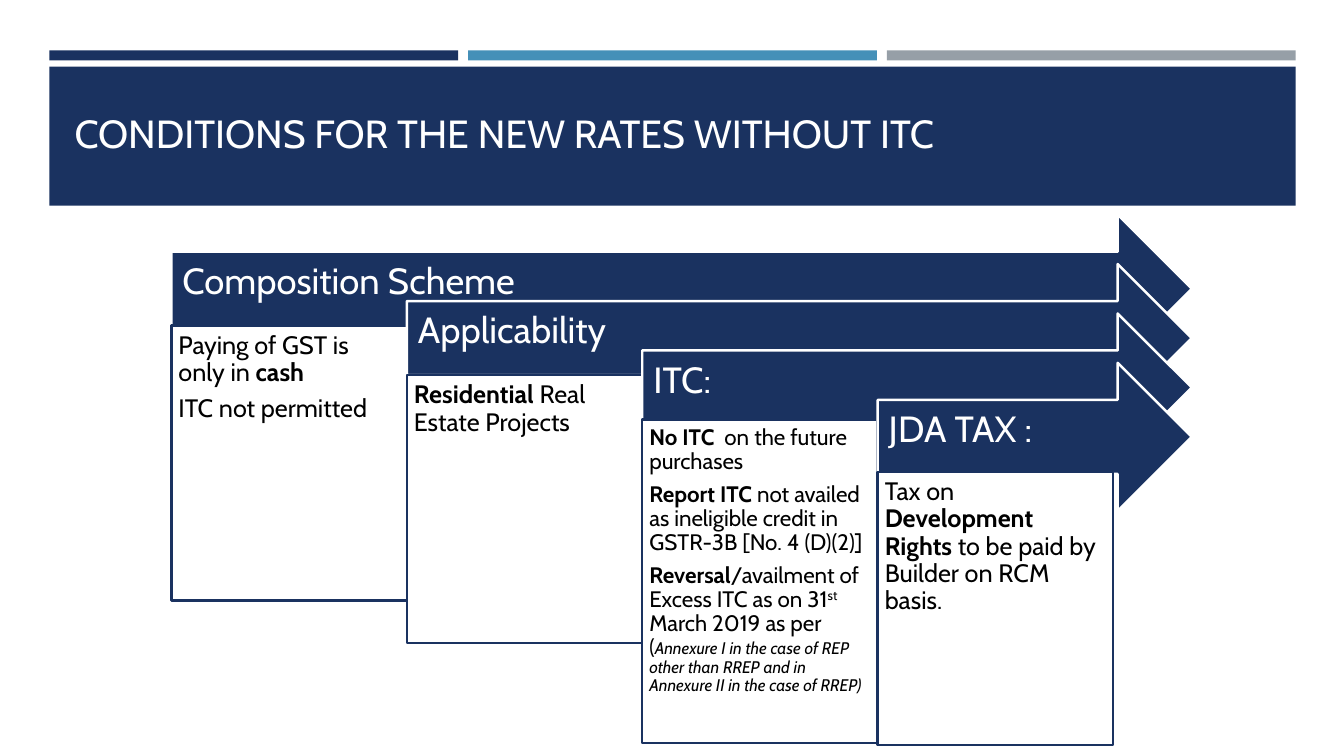
from dataclasses import dataclass

import pptx
import pptx.util
from pptx.dml.color import RGBColor
from pptx.enum.shapes import MSO_SHAPE
from pptx.enum.text import MSO_ANCHOR, PP_ALIGN
from pptx.util import Inches, Pt


@dataclass(frozen=True)
class Theme:
    font: str = "Cabin"
    navy: RGBColor = RGBColor(0x1A, 0x32, 0x60)
    blue: RGBColor = RGBColor(0x45, 0x90, 0xB8)
    gray: RGBColor = RGBColor(0x96, 0x9F, 0xA7)
    white: RGBColor = RGBColor(0xFF, 0xFF, 0xFF)
    black: RGBColor = RGBColor(0, 0, 0)
    title: int = 28
    head: int = 26
    body: int = 18
    small: int = 16
    paren: int = 15
    note: int = 12
    line: float = 1.75


THEME = Theme()

# Heading, panel top, panel height, text size, paragraphs of (text, style) runs
STEPS = [
    ("Composition Scheme", 3.23, 2.73, THEME.body, [
        [("Paying of GST is only in ", ""), ("cash", "bold")],
        [("ITC not permitted", "")],
    ]),
    ("Applicability", 3.72, 2.66, THEME.body, [
        [("Residential", "bold"), (" Real Estate Projects", "")],
    ]),
    ("ITC:", 4.16, 3.21, THEME.small, [
        [("No ITC  ", "bold"), ("on the future purchases", "")],
        [("Report ITC ", "bold"),
         ("not availed as ineligible credit in GSTR-3B [No. 4 (D)(2)]", "")],
        [("Reversal", "bold"), ("/availment of Excess ITC as on 31", ""),
         ("st", "super"), (" March 2019 as per ", ""), ("(", "paren"),
         ("Annexure I in the case of REP other than RREP and in "
          "Annexure II in the case of RREP)", "note")],
    ]),
    ("JDA TAX :", 4.68, 2.71, THEME.body, [
        [("Tax on ", ""), ("Development Rights ", "bold"),
         ("to be paid by Builder on RCM basis.", "")],
    ]),
]


def add_block(slide, kind, box, fill, line=None):
    shape = slide.shapes.add_shape(kind, *map(Inches, box))
    shape.shadow.inherit = False
    shape.fill.solid()
    shape.fill.fore_color.rgb = fill
    if line is None:
        shape.line.fill.background()
    else:
        shape.line.color.rgb = line
        shape.line.width = Pt(THEME.line)
    return shape


def set_frame(frame, anchor, insets):
    """Set anchor and the left, top, right and bottom insets in inches."""
    frame.word_wrap = True
    frame.vertical_anchor = anchor
    (frame.margin_left, frame.margin_top,
     frame.margin_right, frame.margin_bottom) = map(Inches, insets)


def set_para(para, size, color):
    para.alignment = PP_ALIGN.LEFT
    para.line_spacing = 0.9
    para.space_after = Pt(round(size * 0.35))
    para.font.name = THEME.font
    para.font.size = Pt(size)
    para.font.color.rgb = color


def add_run(para, text, style):
    run = para.add_run()
    run.text = text
    if style == "bold":
        run.font.bold = True
    elif style == "super":
        run.font._element.set("baseline", "30000")
    elif style == "paren":
        run.font.size = Pt(THEME.paren)
    elif style == "note":
        run.font.size = Pt(THEME.note)
        run.font.italic = True


def add_header(slide, box, text):
    """Draw three bars over a title band that fills the rest of the box."""
    left, top, width, height = box
    gap, thick, drop = 0.1, 0.1, 0.16
    bar = (width - 2 * gap) / 3
    for i, color in enumerate((THEME.navy, THEME.blue, THEME.gray)):
        place = (left + i * (bar + gap), top, bar, thick)
        add_block(slide, MSO_SHAPE.RECTANGLE, place, color)
    place = (left, top + drop, width, height - drop)
    band = add_block(slide, MSO_SHAPE.RECTANGLE, place, THEME.navy)

    title = slide.shapes.title
    band.element.addnext(title.element)
    pad = 0.15
    title.left, title.top = Inches(left + pad), Inches(top + drop + pad)
    title.width = Inches(width - 2 * pad)
    title.height = Inches(height - drop - 2 * pad)
    title.text_frame.text = text
    set_frame(title.text_frame, MSO_ANCHOR.MIDDLE, (0.1, 0.05, 0.1, 0.05))
    set_para(title.text_frame.paragraphs[0], THEME.title, THEME.white)


def add_arrow(slide, box, text):
    arrow = add_block(slide, MSO_SHAPE.RIGHT_ARROW, box,
                      THEME.navy, THEME.white)
    frame = arrow.text_frame
    set_frame(frame, MSO_ANCHOR.MIDDLE, (0.11, 0.11, 0.28, 0.23))
    frame.text = text
    set_para(frame.paragraphs[0], THEME.head, THEME.white)


def add_panel(slide, box, size, paras):
    panel = add_block(slide, MSO_SHAPE.RECTANGLE, box,
                      THEME.white, THEME.navy)
    frame = panel.text_frame
    set_frame(frame, MSO_ANCHOR.TOP, (0.07,) * 4)
    for i, runs in enumerate(paras):
        para = frame.add_paragraph() if i else frame.paragraphs[0]
        set_para(para, size, THEME.black)
        for text, style in runs:
            add_run(para, text, style)


def add_stairs(slide, box, steps):
    """Overlap arrows that share a right edge, each with a panel below."""
    left, top, width, height = box
    pitch, drop = 2.335, 0.49
    for i, (head, low, tall, size, paras) in enumerate(steps):
        shift = i * pitch
        add_arrow(slide, (left + shift, top + i * drop,
                          width - shift, height), head)
        add_panel(slide, (left + shift, low, pitch, tall), size, paras)


def main():
    deck = pptx.Presentation()
    deck.slide_width, deck.slide_height = Inches(13.33), Inches(7.5)
    slide = deck.slides.add_slide(deck.slide_layouts[5])
    add_header(slide, (0.49, 0.5, 12.36, 1.54),
               "CONDITIONS FOR THE NEW RATES WITHOUT ITC")
    add_stairs(slide, (1.7, 2.13, 10.12, 1.47), STEPS)
    deck.save("out.pptx")


if __name__ == "__main__":
    main()
